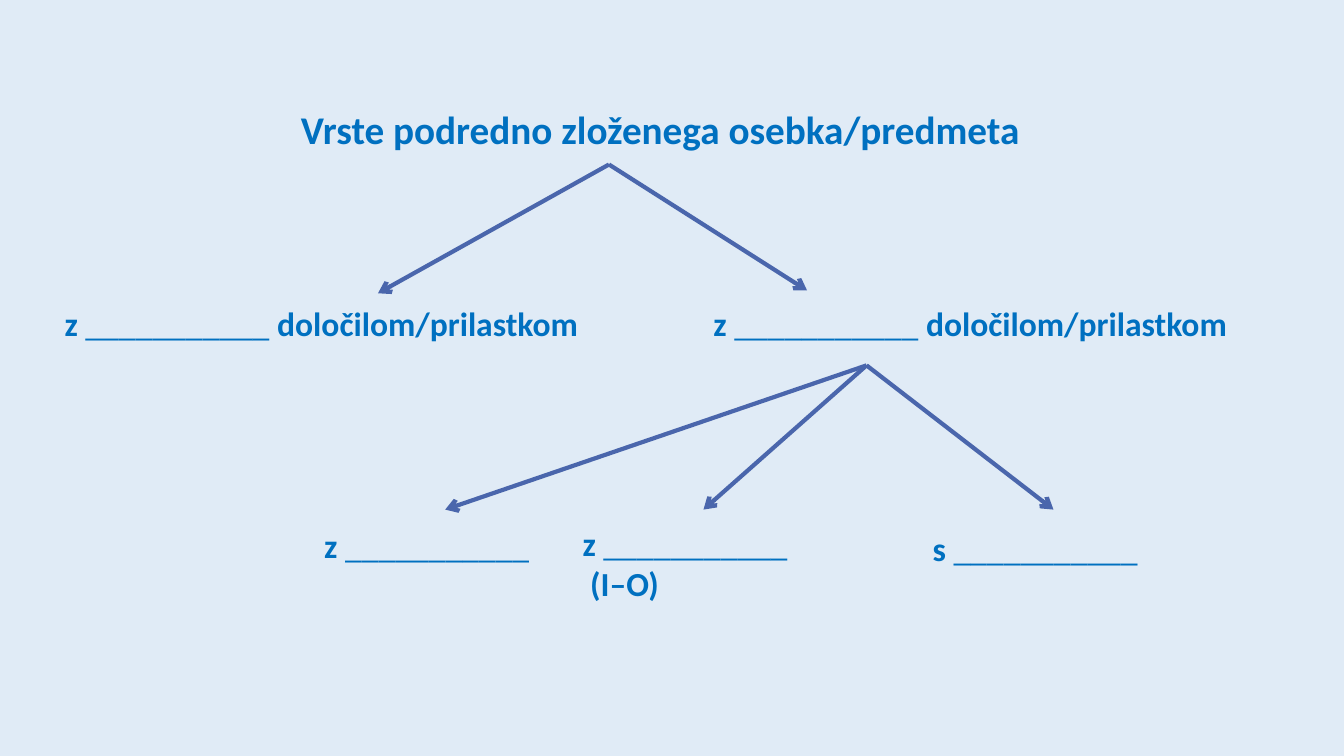
import dataclasses

import lxml.etree
import pptx
import pptx.dml.color
import pptx.enum.shapes
import pptx.enum.text
import pptx.oxml.ns
import pptx.util

Pt = pptx.util.Pt
BACKGROUND = pptx.dml.color.RGBColor(0xE0, 0xEB, 0xF6)
LETTERING = pptx.dml.color.RGBColor(0x00, 0x70, 0xC0)
ARROW = pptx.dml.color.RGBColor(0x4A, 0x66, 0xAC)
FONT = "Calibri"
BLANK = "___________"


@dataclasses.dataclass
class Box:
    left: float
    top: float
    width: float
    height: float


@dataclasses.dataclass
class Branch:
    pieces: list
    label: Box
    tip: tuple


def add_pieces(paragraph, pieces, size):
    for wording, bold in pieces:
        if wording == "\n":
            paragraph.add_line_break()
            continue
        run = paragraph.add_run()
        run.text = wording
        run.font.name = FONT
        run.font.size = Pt(size)
        run.font.bold = bold
        run.font.color.rgb = LETTERING


def add_label(slide, box, pieces, size, alignment):
    label = slide.shapes.add_textbox(
        Pt(box.left), Pt(box.top), Pt(box.width), Pt(box.height))
    label.text_frame.word_wrap = True
    paragraph = label.text_frame.paragraphs[0]
    paragraph.alignment = alignment
    add_pieces(paragraph, pieces, size)


def add_arrow(slide, start, tip):
    arrow = slide.shapes.add_connector(
        pptx.enum.shapes.MSO_CONNECTOR.STRAIGHT,
        Pt(start[0]), Pt(start[1]), Pt(tip[0]), Pt(tip[1]))
    arrow.line.color.rgb = ARROW
    arrow.line.width = Pt(3)
    qn = pptx.oxml.ns.qn
    lxml.etree.SubElement(arrow.line._ln, qn("a:tailEnd"), type="arrow")
    lxml.etree.SubElement(arrow._element.spPr, qn("a:effectLst"))


def add_heading(slide, box):
    add_label(slide, box, [("Vrste podredno zloženega osebka/predmeta", True)],
              28, pptx.enum.text.PP_ALIGN.CENTER)


def add_level(slide, box, apex_offset, branches):
    apex = (box.left + apex_offset, box.top)
    for branch in branches:
        label = dataclasses.replace(
            branch.label, left=box.left + branch.label.left,
            top=box.top + branch.label.top)
        add_label(slide, label, branch.pieces, 24,
                  pptx.enum.text.PP_ALIGN.LEFT)
        add_arrow(slide, apex,
                  (label.left + branch.tip[0], box.top + branch.tip[1]))


def add_modifier_level(slide, box):
    pieces = [("z ", True), (BLANK + " ", False),
              ("določilom/prilastkom", True)]
    add_level(slide, box, 396, [
        Branch(pieces, Box(0, 95, 430, 36), (231, 92)),
        Branch(pieces, Box(463.5, 95, 438, 36), (74, 90)),
    ])


def add_kind_level(slide, box):
    width = 187
    kinds = [
        ("z ", [], 0, 110.5, 36),
        ("z ", [("\n", False), (" (I–O)", True)], 184.5, 109, 65.5),
        ("s ", [], 434.5, 112.5, 36),
    ]
    add_level(slide, box, 394.5, [
        Branch([(preposition, True), (BLANK, False)] + ending,
               Box(left, top, width, height), (width / 2, 103))
        for preposition, ending, left, top, height in kinds
    ])


def main():
    presentation = pptx.Presentation()
    presentation.slide_width = Pt(960)
    presentation.slide_height = Pt(540)
    slide = presentation.slides.add_slide(presentation.slide_layouts[6])
    slide.background.fill.solid()
    slide.background.fill.fore_color.rgb = BACKGROUND
    add_heading(slide, Box(111.5, 71.5, 720, 51))
    add_modifier_level(slide, Box(39, 117.5, 901.5, 131))
    add_kind_level(slide, Box(224.5, 261, 621.5, 174.5))
    presentation.save("out.pptx")


if __name__ == "__main__":
    main()
